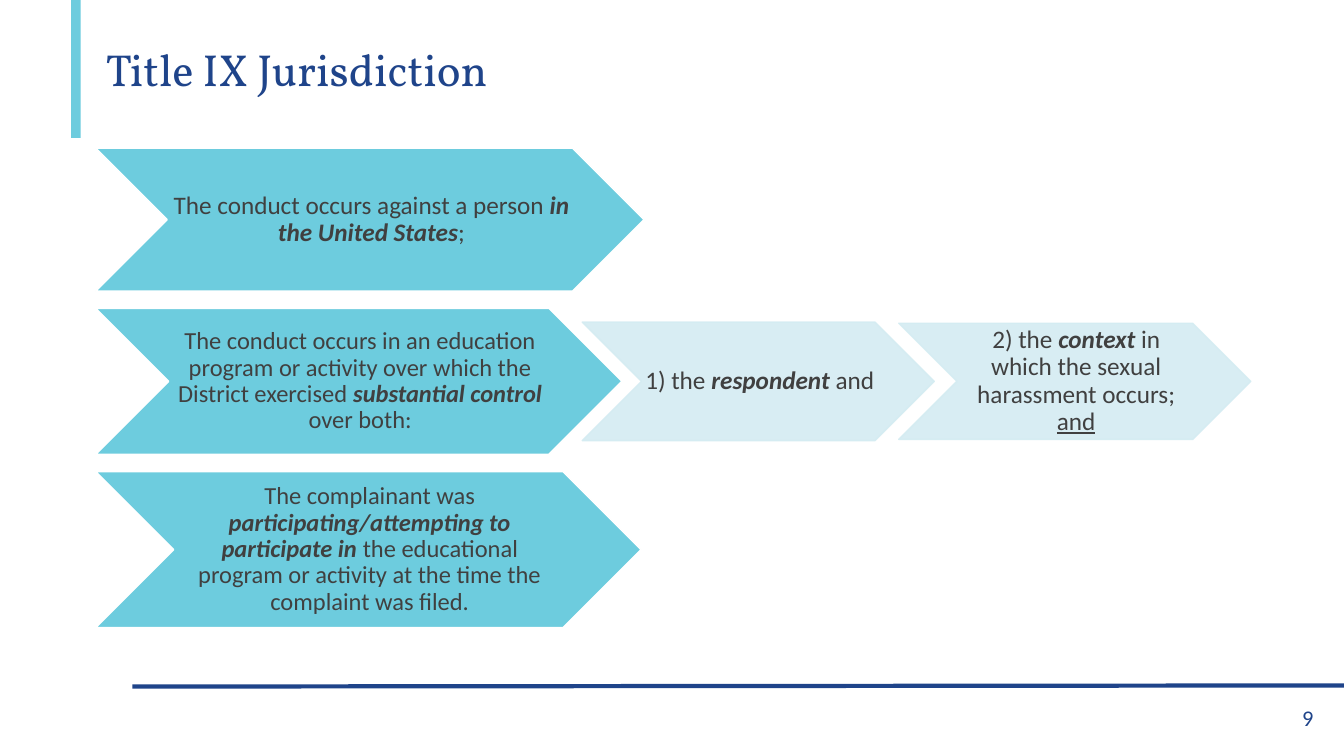
from dataclasses import dataclass

from lxml import etree
from pptx import Presentation
from pptx import util as u
from pptx.dml.color import RGBColor
from pptx.enum import shapes, text
from pptx.oxml import ns


@dataclass(frozen=True)
class Theme:
    navy: str = "1F448A"
    teal: str = "6DCCDE"
    pale: str = "D4ECF2"
    ink: str = "404040"
    white: str = "FFFFFF"
    heading_font: str = "Vollkorn"
    body_font: str = "Calibri"
    title_size: float = 32
    large_size: float = 18
    body_size: float = 17.5
    number_size: float = 16
    pale_opacity: int = 90


STRONG = {"bold": True, "italic": True}
UNDERLINED = {"underline": True}


def apply_format(target, values):
    for name, value in values.items():
        setattr(target, name, value)


class SlideBuilder:
    def __init__(self, presentation, theme):
        self.theme = theme
        self.slide = presentation.slides.add_slide(presentation.slide_layouts[5])

    def paint(self, fill, color, opacity=100):
        fill.solid()
        fill.fore_color.rgb = RGBColor.from_string(color)
        if opacity < 100:
            element = fill._xPr.find(ns.qn("a:solidFill")).find(ns.qn("a:srgbClr"))
            etree.SubElement(element, ns.qn("a:alpha"), val=str(opacity * 1000))

    def fill_text(self, shape, runs, font, color, frame, paragraph):
        text_frame = shape.text_frame
        apply_format(text_frame, {"word_wrap": True, "auto_size": text.MSO_AUTO_SIZE.NONE, **frame})
        first = text_frame.paragraphs[0]
        apply_format(first, paragraph)
        for words, emphasis in runs:
            run = first.add_run()
            run.text = words
            apply_format(run.font, {**font, **emphasis})
            run.font.color.rgb = RGBColor.from_string(color)

    def title(self, words, left, top, width, height):
        shape = self.slide.shapes.title
        apply_format(shape, {"left": u.Pt(left), "top": u.Pt(top),
                             "width": u.Pt(width), "height": u.Pt(height)})
        self.fill_text(
            shape, [(words, {})],
            {"name": self.theme.heading_font, "size": u.Pt(self.theme.title_size), "bold": False},
            self.theme.navy,
            {"vertical_anchor": text.MSO_ANCHOR.MIDDLE, "margin_left": u.Pt(7.2),
             "margin_top": u.Pt(7.2), "margin_right": u.Pt(7.2), "margin_bottom": u.Pt(3.6)},
            {"alignment": text.PP_ALIGN.LEFT, "line_spacing": 0.9})

    def shape(self, kind, left, top, width, height, color, opacity=100):
        shape = self.slide.shapes.add_shape(
            kind, u.Pt(left), u.Pt(top), u.Pt(width), u.Pt(height))
        shape.shadow.inherit = False
        self.paint(shape.fill, color, opacity)
        shape.line.fill.background()
        return shape

    def text_box(self, left, top, width, height, runs, font, color, frame, paragraph):
        box = self.slide.shapes.add_textbox(u.Pt(left), u.Pt(top), u.Pt(width), u.Pt(height))
        self.fill_text(box, runs, font, color, frame, paragraph)

    def chevron(self, left, top, width, height, runs, size, color, border, opacity=100):
        shape = self.shape(shapes.MSO_SHAPE.CHEVRON, left, top, width, height, color, opacity)
        self.paint(shape.line.fill, border, opacity)
        shape.line.width = u.Pt(1)
        self.text_box(
            left + height / 2, top, width - height, height, runs,
            {"name": self.theme.body_font, "size": u.Pt(size)}, self.theme.ink,
            {"vertical_anchor": text.MSO_ANCHOR.MIDDLE, "margin_left": u.Pt(2),
             "margin_top": u.Pt(1), "margin_right": 0, "margin_bottom": u.Pt(1)},
            {"alignment": text.PP_ALIGN.CENTER, "line_spacing": 0.9})

    def line(self, start, end, color, width):
        line = self.slide.shapes.add_connector(
            shapes.MSO_CONNECTOR.STRAIGHT, *(u.Pt(value) for value in start + end))
        line.line.width = u.Pt(width)
        line.line.color.rgb = RGBColor.from_string(color)
        etree.SubElement(line._element.spPr, ns.qn("a:effectLst"))

    def page_number(self, number, left, top, width, height):
        self.text_box(
            left, top, width, height, [(number, {})],
            {"name": self.theme.body_font, "size": u.Pt(self.theme.number_size)},
            self.theme.navy, {}, {"alignment": text.PP_ALIGN.RIGHT})


def main():
    theme = Theme()
    presentation = Presentation()
    apply_format(presentation, {"slide_width": u.Pt(960), "slide_height": u.Pt(540)})
    builder = SlideBuilder(presentation, theme)

    builder.line((94.5, 490.4), (960, 489.6), theme.navy, 3)
    builder.shape(shapes.MSO_SHAPE.RECTANGLE, 50.8, 0, 6.8, 98.6, theme.teal)

    left = 68.4
    conditions = [
        (105.8, 391.7, 102.2, theme.large_size, [
            ("The conduct occurs against a person ", {}),
            ("in the United States", STRONG),
            (";", {})]),
        (220.3, 375.8, 104.2, theme.body_size, [
            ("The conduct occurs in an education program or activity over which "
             "the District exercised ", {}),
            ("substantial control ", STRONG),
            ("over both:", {})]),
        (336.9, 389.5, 111.4, theme.body_size, [
            ("The complainant was ", {}),
            ("participating/attempting to participate in ", STRONG),
            ("the educational program or activity at the time the complaint was filed.", {})]),
    ]
    for top, width, height, size, runs in conditions:
        builder.chevron(left, top, width, height, runs, size, theme.teal, theme.white)

    control_middle = 272.4
    controls = [
        (415.9, 84.6, [("1) the ", {}), ("respondent", STRONG), (" and ", {})]),
        (642, 83, [("2) the ", {}), ("context", STRONG),
                   (" in which the sexual harassment occurs; ", {}), ("and", UNDERLINED)]),
    ]
    for control_left, height, runs in controls:
        builder.chevron(control_left, control_middle - height / 2, 251.5, height, runs,
                        theme.large_size, theme.pale, theme.pale, theme.pale_opacity)

    builder.title("Title IX Jurisdiction", left, 0, 825.8, 98.6)
    builder.page_number("9", 905, 499.7, 40.3, 28.8)
    presentation.save("out.pptx")


if __name__ == "__main__":
    main()
